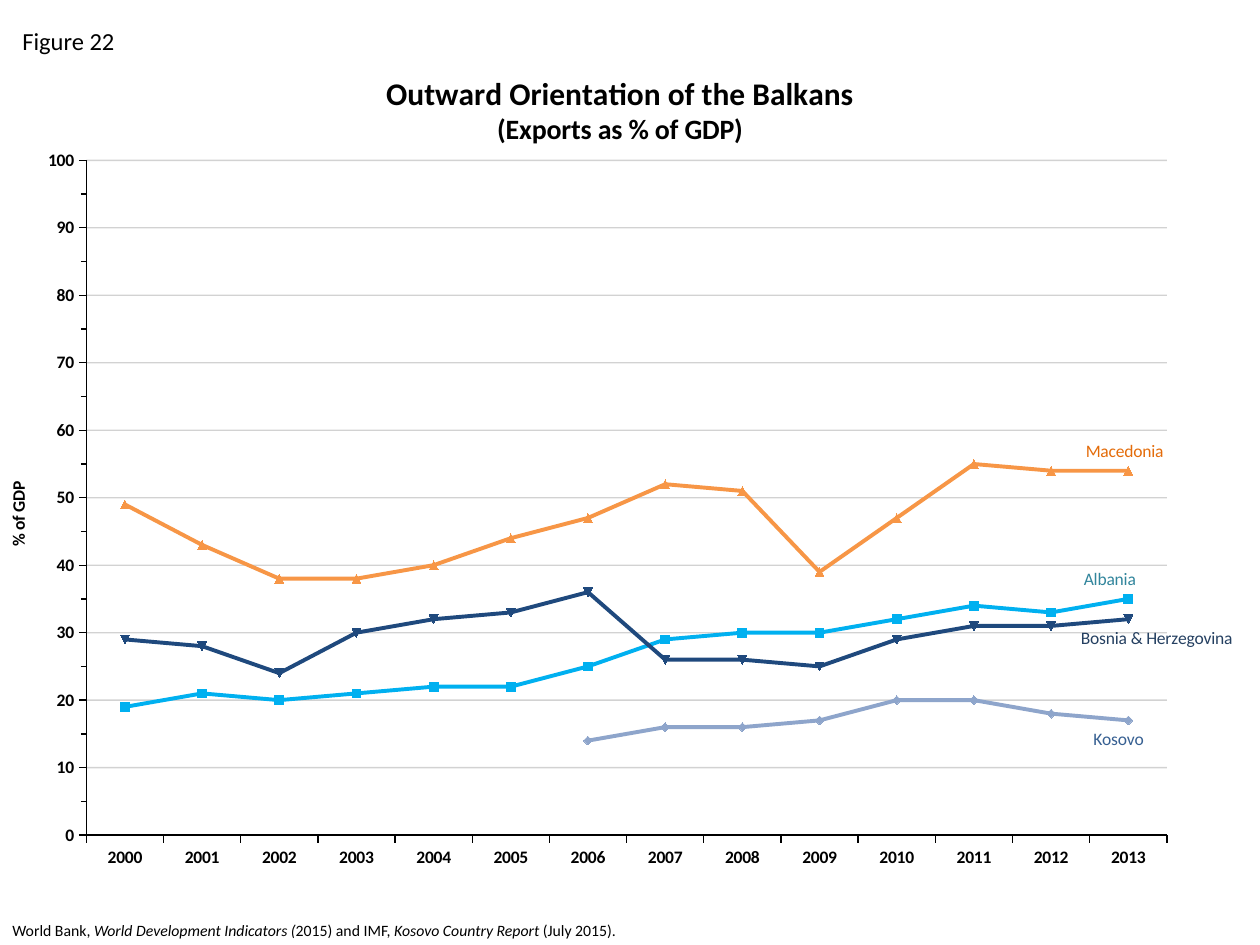
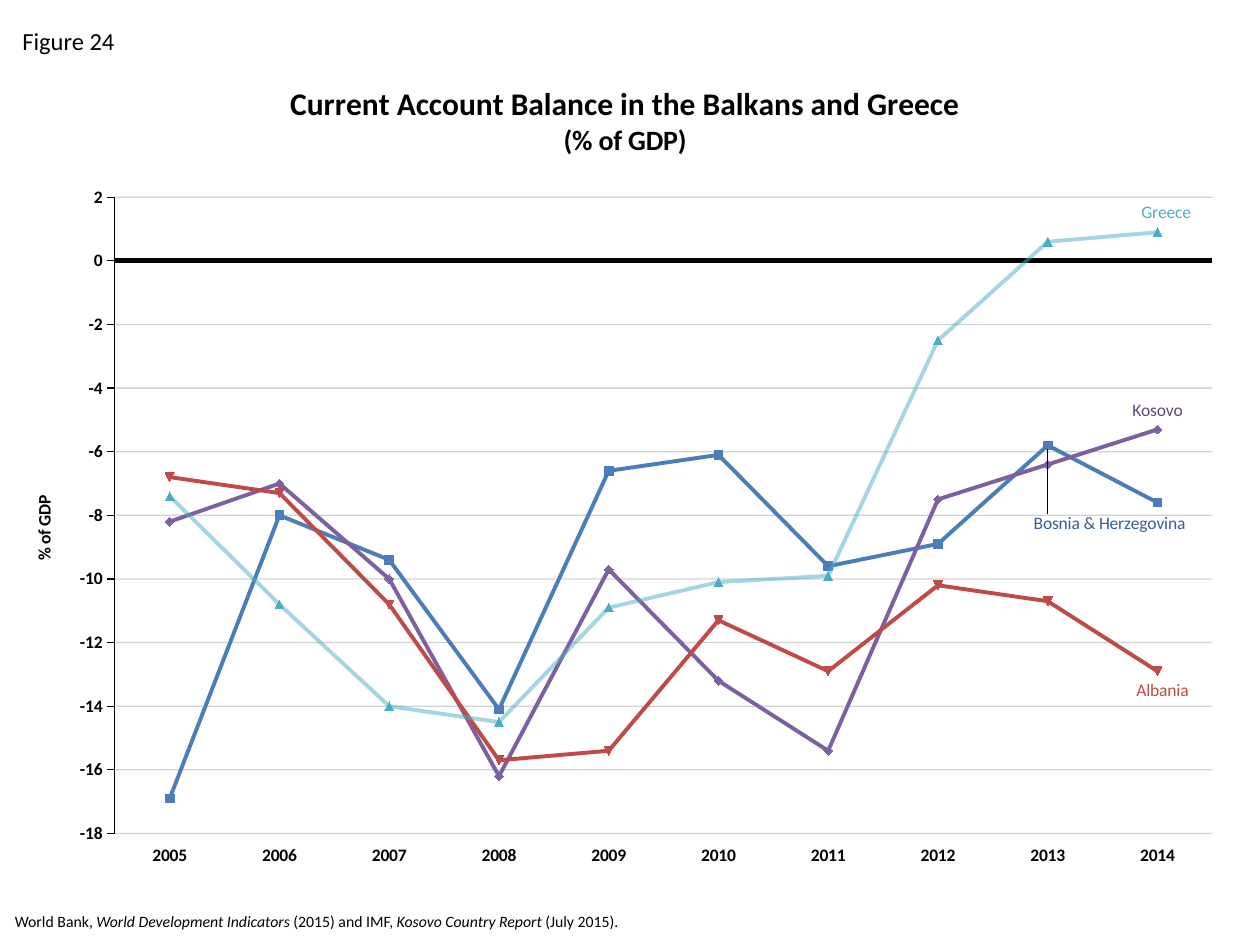
from lxml.etree import SubElement
from pptx import Presentation
from pptx.chart.data import CategoryChartData
from pptx.dml.color import RGBColor
from pptx.enum.chart import XL_CHART_TYPE, XL_LABEL_POSITION, XL_TICK_LABEL_POSITION, XL_TICK_MARK
from pptx.oxml import parse_xml
from pptx.oxml.ns import nsdecls, qn
from pptx.util import Cm, Pt

FONT = "Calibri"
COLORS = {
    "black": "000000",
    "grid": "808080",
    "sky": "00B0F0",
    "lavender": "8EA5CB",
    "navy": "1F497D",
    "orange": "F79646",
    "blue": "4A7EBB",
    "purple": "7D60A0",
    "red": "BE4B48",
    "aqua": "4BACC6",
    "dark teal": "31859C",
    "dark blue": "376092",
    "dark navy": "254061",
    "dark orange": "E46C0A",
    "dark purple": "604A7B",
}
ABOVE, BELOW = XL_LABEL_POSITION.ABOVE, XL_LABEL_POSITION.BELOW

EXPORTS = {
    "figure": "Figure 22",
    "title": ("Outward Orientation of the Balkans", "(Exports as % of GDP)"),
    "frame": (0, 1.22, 24.89, 16.51),
    "title_at": (0.31, 0.01),
    "axis_title_at": (0.003, 0.51),
    "plot_at": (0.07, 0.122, 0.876, 0.824),
    "years": range(2000, 2014),
    "scale": {"minimum_scale": 0, "maximum_scale": 100, "major_unit": 10},
    "minor_unit": 5,
    "category_axis": {"major_tick_mark": XL_TICK_MARK.OUTSIDE},
    "category_line": 0.75,
    "source_at": (0, 18.44),
    "source": ("World Bank, ", "World Development Indicators (", "2015) and IMF, ",
               "Kosovo Country Report ", "(July 2015)."),
    "lines": [
        {"name": "Albania", "color": "sky", "text": "dark teal",
         "values": (19, 21, 20, 21, 22, 22, 25, 29, 30, 30, 32, 34, 33, 35),
         "label": (13, ABOVE, -0.015, 0)},
        {"name": "Kosovo", "color": "lavender", "text": "dark blue",
         "values": (None,) * 6 + (14, 16, 16, 17, 20, 20, 18, 17),
         "label": (13, BELOW, -0.008, 0)},
        {"name": "Bosnia & Herzegovina", "color": "navy", "text": "dark navy",
         "values": (29, 28, 24, 30, 32, 33, 36, 26, 26, 25, 29, 31, 31, 32),
         "label": (13, BELOW, 0.023, 0)},
        {"name": "Macedonia", "color": "orange", "text": "dark orange",
         "values": (49, 43, 38, 38, 40, 44, 47, 52, 51, 39, 47, 55, 54, 54),
         "label": (13, ABOVE, -0.003, 0)},
    ],
}

BALANCE = {
    "figure": "Figure 24",
    "title": ("Current Account Balance in the Balkans and Greece", "(% of GDP)"),
    "frame": (0.05, 1.27, 24.89, 16.51),
    "title_at": (0.23, 0.02),
    "axis_title_at": (0.022, 0.524),
    "plot_at": (0.091, 0.164, 0.889, 0.777),
    "years": range(2005, 2015),
    "scale": {"minimum_scale": -18, "maximum_scale": 2, "major_unit": 2},
    "minor_unit": None,
    "category_axis": {"major_tick_mark": XL_TICK_MARK.NONE,
                      "tick_label_position": XL_TICK_LABEL_POSITION.LOW},
    "category_line": 3,
    "source_at": (0.05, 18.26),
    "source": ("World Bank, ", "World Development Indicators ", "(2015) and IMF, ",
               "Kosovo Country Report ", "(July 2015)."),
    "lines": [
        {"name": "Bosnia & Herzegovina", "color": "blue", "text": "dark blue",
         "values": (-16.9, -8, -9.4, -14.1, -6.6, -6.1, -9.6, -8.9, -5.8, -7.6),
         "label": (8, BELOW, 0.05, 0.072)},
        {"name": "Kosovo", "color": "purple", "text": "dark purple",
         "values": (-8.2, -7, -10, -16.2, -9.7, -13.2, -15.4, -7.5, -6.4, -5.3),
         "label": (9, ABOVE, 0, 0)},
        {"name": "Albania", "color": "red", "text": "red",
         "values": (-6.8, -7.3, -10.8, -15.7, -15.4, -11.3, -12.9, -10.2, -10.7, -12.9),
         "label": (9, BELOW, 0.004, 0)},
        {"name": "Greece", "color": "aqua", "text": "aqua", "opacity": 50,
         "values": (-7.4, -10.8, -14, -14.5, -10.9, -10.1, -9.9, -2.5, 0.6, 0.9),
         "label": (9, ABOVE, 0.007, 0)},
    ],
}


def set_values(target, values):
    for name, value in values.items():
        setattr(target, name, value)


def style_font(font, size, color="black", bold=False, italic=False):
    set_values(font, {"name": FONT, "size": Pt(size), "bold": bold, "italic": italic})
    font.color.rgb = RGBColor.from_string(COLORS[color])


def style_line(line, color, width, opacity=100):
    line.color.rgb = RGBColor.from_string(COLORS[color])
    line.width = Pt(width)
    if opacity < 100:
        for fill in line._ln.iter(qn("a:srgbClr")):
            SubElement(fill, qn("a:alpha"), val=str(opacity * 1000))


def set_layout(element, index, numbers, modes=()):
    for old in element.findall(qn("c:layout")):
        element.remove(old)
    parts = "".join(f'<c:{mode} val="{value}"/>' for mode, value in modes)
    parts += "".join(f'<c:{key} val="{value}"/>' for key, value in zip("xywh", numbers))
    element.insert(index, parse_xml(
        f'<c:layout {nsdecls("c")}><c:manualLayout>{parts}</c:manualLayout></c:layout>'))


def add_text(page, left, top, width, height, spans, size):
    box = page.shapes.add_textbox(Cm(left), Cm(top), Cm(width), Cm(height))
    box.text_frame.word_wrap = True
    for text, italic in spans:
        span = box.text_frame.paragraphs[0].add_run()
        span.text = text
        style_font(span.font, size, italic=italic)


def write_title(title, lines, sizes, position):
    frame = title.text_frame
    for index, (text, size) in enumerate(zip(lines, sizes)):
        para = frame.add_paragraph() if index else frame.paragraphs[0]
        span = para.add_run()
        span.text = text
        style_font(span.font, size, bold=True)
    edges = (("xMode", "edge"), ("yMode", "edge"))
    set_layout(title._element, 1, position, edges)


def style_axes(chart, figure):
    years, percent = chart.category_axis, chart.value_axis
    for axis, width in ((years, figure["category_line"]), (percent, 0.75)):
        style_font(axis.tick_labels.font, 10, bold=True)
        style_line(axis.format.line, "black", width)
    set_values(years, {"has_major_gridlines": False, **figure["category_axis"]})
    set_values(percent, {"major_tick_mark": XL_TICK_MARK.OUTSIDE,
                         "has_major_gridlines": True, **figure["scale"]})
    set_values(percent.tick_labels, {"number_format": "0", "number_format_is_linked": False})
    style_line(percent.major_gridlines.format.line, "grid", 0.75, 35)
    if figure["minor_unit"]:
        set_values(percent, {"minor_unit": figure["minor_unit"],
                             "minor_tick_mark": XL_TICK_MARK.OUTSIDE})
    write_title(percent.axis_title, ["% of GDP"], [10], figure["axis_title_at"])


def style_country(series, country):
    series.smooth = False
    series.marker.style = None
    style_line(series.format.line, country["color"], 2.25, country.get("opacity", 100))
    series.data_labels.show_value = False
    point, position, shift_x, shift_y = country["label"]
    label = series.points[point].data_label
    span = label.text_frame.paragraphs[0].add_run()
    span.text = country["name"]
    style_font(span.font, 10, country["text"])
    label.position = position
    set_layout(next(series._element.iter(qn("c:dLbl"))), 1, (shift_x, shift_y))


def add_line_chart(page, figure):
    data = CategoryChartData()
    data.categories = [str(year) for year in figure["years"]]
    for country in figure["lines"]:
        data.add_series(country["name"], country["values"])
    frame = map(Cm, figure["frame"])
    chart = page.shapes.add_chart(XL_CHART_TYPE.LINE, *frame, data).chart
    chart.has_legend = False
    style_font(chart.font, 10)
    write_title(chart.chart_title, figure["title"], (18, 16), figure["title_at"])
    style_axes(chart, figure)
    plot = chart.plots[0]
    plot.vary_by_categories = False
    for series, country in zip(plot.series, figure["lines"]):
        style_country(series, country)
    modes = (("layoutTarget", "inner"), ("xMode", "edge"), ("yMode", "edge"))
    set_layout(next(chart._chartSpace.iter(qn("c:plotArea"))), 0, figure["plot_at"], modes)


def add_figure_page(deck, figure):
    page = deck.slides.add_slide(deck.slide_layouts[6])
    add_text(page, 0.2, 0.41, 3.38, 0.86, [(figure["figure"], False)], 14)
    spans = [(text, index % 2 == 1) for index, text in enumerate(figure["source"])]
    add_text(page, *figure["source_at"], 25.4, 0.64, spans, 9)
    add_line_chart(page, figure)


def main():
    deck = Presentation()
    set_values(deck, {"slide_width": Cm(25.4), "slide_height": Cm(19.05)})
    for figure in (EXPORTS, BALANCE):
        add_figure_page(deck, figure)
    deck.save("out.pptx")


if __name__ == "__main__":
    main()
